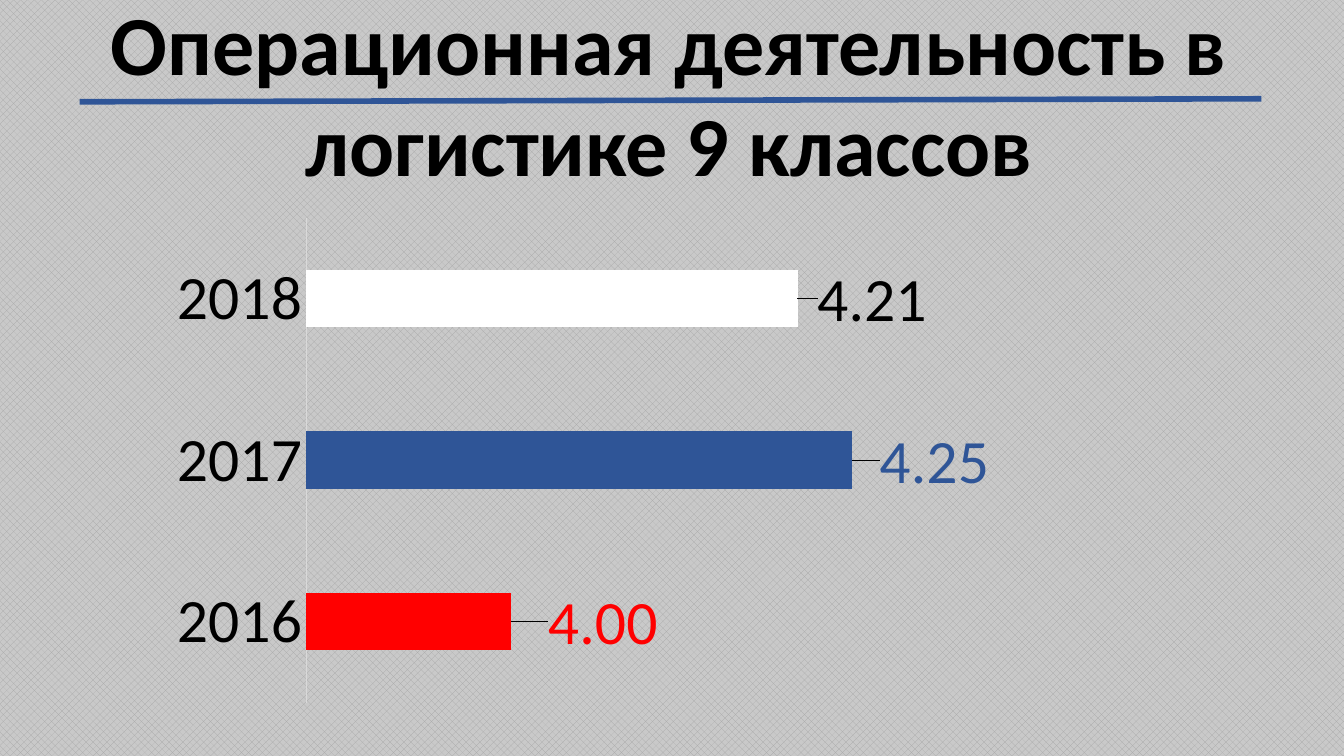
from lxml import etree
from pptx import Presentation
from pptx.chart.data import CategoryChartData
from pptx.dml.color import RGBColor
from pptx.enum import chart as ch, dml, shapes, text
from pptx.oxml import parse_xml
from pptx.oxml.ns import qn
from pptx.util import Inches, Pt

BLACK = RGBColor(0, 0, 0)
WHITE = RGBColor(0xFF, 0xFF, 0xFF)
RED = RGBColor(0xFF, 0, 0)
BLUE = RGBColor(0x2F, 0x55, 0x97)
PALE = RGBColor(0xD9, 0xD9, 0xD9)
FONT = "Calibri"
C_NS = 'xmlns:c="http://schemas.openxmlformats.org/drawingml/2006/chart"'


def layout(**parts):
    tags = "".join(f'<c:{k} val="{v}"/>' for k, v in parts.items())
    return parse_xml(f"<c:layout {C_NS}><c:manualLayout>{tags}</c:manualLayout></c:layout>")


prs = Presentation()
prs.slide_width, prs.slide_height = Inches(13.33), Inches(7.5)
slide = prs.slides.add_slide(prs.slide_layouts[6])

# Patterned background
back = slide.background.fill
back.patterned()
back.pattern = dml.MSO_PATTERN.PERCENT_50
back.fore_color.rgb = RGBColor(0xA6, 0xA6, 0xA6)
back.back_color.rgb = RGBColor(0xC9, 0xC9, 0xC9)

# Rule behind the title
rule = slide.shapes.add_connector(shapes.MSO_CONNECTOR.STRAIGHT, Inches(0.79),
                                  Inches(1.01), Inches(12.51), Inches(0.98))
rule.line.color.rgb = BLUE
rule.line.width = Pt(4)
etree.SubElement(rule._element.spPr, qn("a:effectLst"))

# Bar chart of yearly scores
data = CategoryChartData(number_format="0.00")
data.categories = ["2016", "2017", "2018"]
data.add_series("Series 1", [4, 4.25, 4.21])
chart = slide.shapes.add_chart(ch.XL_CHART_TYPE.BAR_CLUSTERED, Inches(0.79), Inches(1.99),
                               Inches(9.61), Inches(5.12), data).chart
chart.has_legend = False
chart.has_title = False
chart.font.name = FONT
chart.font.size = Pt(10)
chart.font.color.rgb = BLACK

area = chart._chartSpace.chart.plotArea
for old in area.findall(qn("c:layout")):
    area.remove(old)
area.insert(0, layout(layoutTarget="inner", xMode="edge", yMode="edge",
                      x=0.234, y=0.033, w=0.634, h=0.94))

# Axes
years = chart.category_axis
years.major_tick_mark = ch.XL_TICK_MARK.NONE
years.format.line.color.rgb = PALE
years.format.line.width = Pt(0.75)
years.tick_labels.font.name = FONT
years.tick_labels.font.size = Pt(44)
years.tick_labels.font.color.rgb = BLACK
scale = chart.value_axis
scale.visible = False
scale.has_major_gridlines = False
scale.minimum_scale, scale.maximum_scale = 3.85, 4.3

# Bars and their shifted labels, joined by the default leader lines
plot = chart.plots[0]
plot.gap_width = 182
plot.vary_by_categories = False
bars = plot.series[0]
bars.data_labels.show_value = True
looks = [(RED, RED, 0.034), (BLUE, BLUE, 0.024), (WHITE, BLACK, 0.016)]
for i, (fill, ink, shift) in enumerate(looks):
    point = bars.points[i]
    point.format.fill.solid()
    point.format.fill.fore_color.rgb = fill
    label = point.data_label
    label.font.name = FONT
    label.font.size = Pt(44)
    label.font.color.rgb = ink
    label.position = ch.XL_LABEL_POSITION.OUTSIDE_END
    mark = bars.data_labels._element.findall(qn("c:dLbl"))[i]
    mark.insert(1, layout(x=shift, y=0.004))

# Title
box = slide.shapes.add_textbox(Inches(0.61), Inches(-0.13), Inches(12.05), Inches(2.12))
frame = box.text_frame
frame.word_wrap = True
frame.auto_size = text.MSO_AUTO_SIZE.SHAPE_TO_FIT_TEXT
frame.text = "Операционная деятельность в логистике 9 классов"
para = frame.paragraphs[0]
para.alignment = text.PP_ALIGN.CENTER
font = para.runs[0].font
font.name = FONT
font.size = Pt(60)
font.bold = True
font.color.rgb = BLACK

prs.save("out.pptx")
